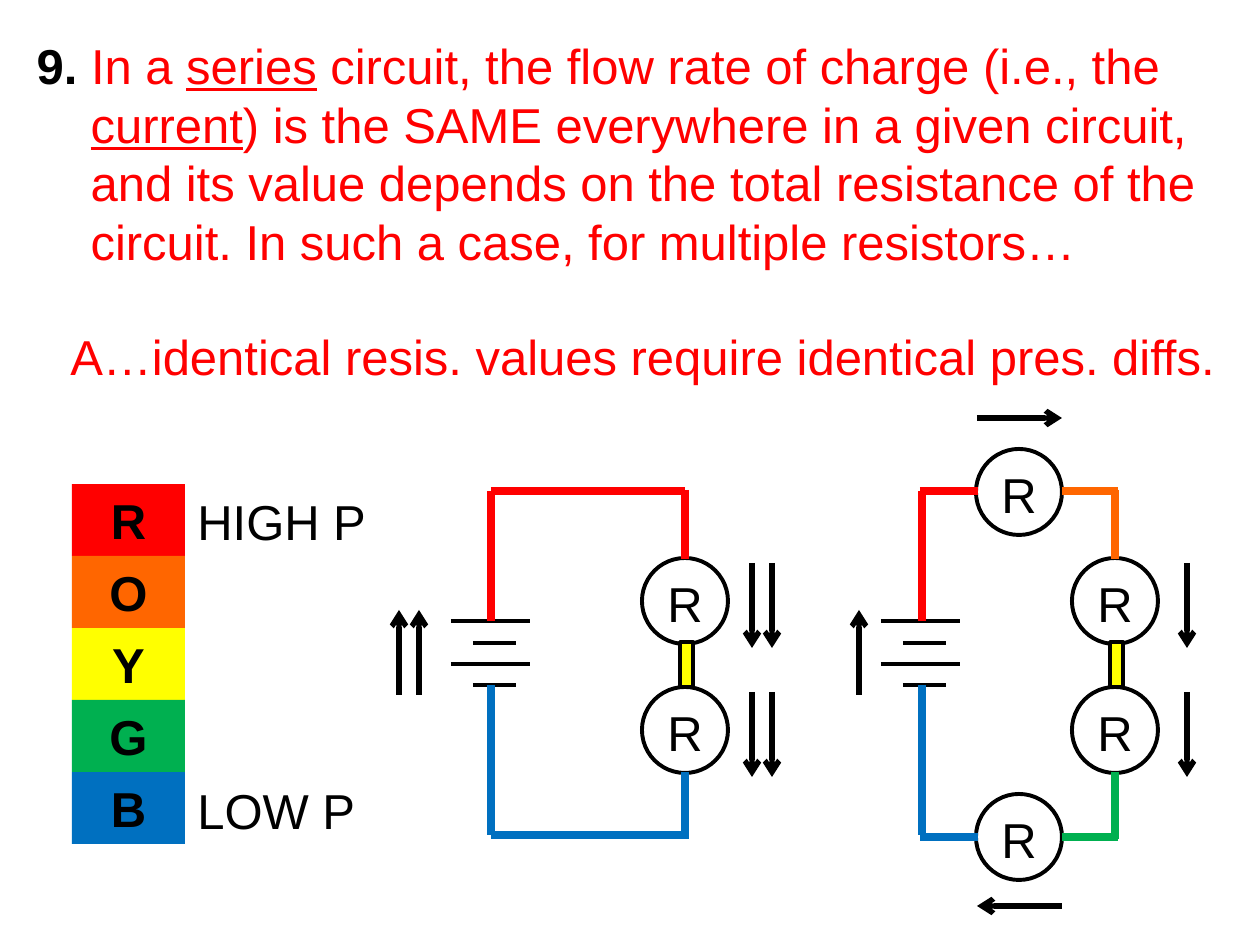
"""Build the slide on series circuits with identical resistors."""
from lxml.etree import SubElement
from pptx import Presentation
from pptx.dml.color import RGBColor
from pptx.enum.shapes import MSO_CONNECTOR, MSO_SHAPE
from pptx.enum.text import MSO_ANCHOR, MSO_AUTO_SIZE, PP_ALIGN
from pptx.oxml.ns import qn
from pptx.util import Emu, Pt

PX = 914400 / 126
COLORS = {"black": "000000", "red": "FF0000", "orange": "FF6600",
          "yellow": "FFFF00", "green": "00B050", "blue": "0070C0"}
RGB = {name: RGBColor.from_string(value) for name, value in COLORS.items()}

deck = Presentation()
deck.slide_width, deck.slide_height = Emu(9144000), Emu(6858000)
slide = deck.slides.add_slide(deck.slide_layouts[5])
shapes = slide.shapes


def add_line(ends, color, width, arrow=False):
    line = shapes.add_connector(MSO_CONNECTOR.STRAIGHT, *[Emu(round(n * PX)) for n in ends])
    line.line.color.rgb = RGB[color]
    line.line.width = Pt(width)
    properties = line._element.spPr
    if arrow:
        SubElement(properties.find(qn("a:ln")), qn("a:tailEnd"), type="arrow")
    SubElement(properties, qn("a:effectLst"))


def style_text(shape, text, color="black", bold=False):
    frame = shape.text_frame
    frame.text = text
    font = frame.paragraphs[0].font
    font.name, font.size, font.bold = "Arial", Pt(28), bold
    font.color.rgb = RGB[color]
    return frame


title = shapes.title
title.left, title.top, title.width, title.height = [
    Emu(round(n * PX)) for n in (24, 29, 1198, 251)]
frame = style_text(title, "", "red")
frame.auto_size, frame.word_wrap = MSO_AUTO_SIZE.NONE, True
frame.vertical_anchor = MSO_ANCHOR.TOP
para = frame.paragraphs[0]
para.alignment = PP_ALIGN.LEFT
indent = round(54 * PX)
para._p.get_or_add_pPr().set("marL", str(indent))
para._p.get_or_add_pPr().set("indent", str(-indent))
for text, style in [
    ("9.", "number"),
    (" In a ", None),
    ("series", "underline"),
    (" circuit, the flow rate of charge (i.e., the ", None),
    ("current", "underline"),
    (") is the SAME everywhere in a given circuit, and its value depends on the total "
     "resistance of the circuit. In such a case, for multiple resistors…", None),
]:
    span = para.add_run()
    span.text = text
    if style == "underline":
        span.font.underline = True
    if style == "number":
        span.font.bold = True
        span.font.color.rgb = RGB["black"]

for left, top, width, text, color in [
    (58, 320, 1198, "A…identical resis. values require identical pres. diffs.", "red"),
    (185, 485, 195, "HIGH P", "black"),
    (185, 774, 185, "LOW P", "black"),
]:
    box = shapes.add_textbox(*[Emu(round(n * PX)) for n in (left, top, width, 72)])
    style_text(box, text, color).word_wrap = False

for row, color in enumerate(["red", "orange", "yellow", "green", "blue"]):
    swatch = shapes.add_shape(
        MSO_SHAPE.RECTANGLE, *[Emu(round(n * PX)) for n in (72, 484 + 72 * row, 113, 72)])
    swatch.shadow.inherit = False
    swatch.fill.solid()
    swatch.fill.fore_color.rgb = RGB[color]
    swatch.line.fill.background()
    style_text(swatch, color[0].upper(), bold=True).paragraphs[0].alignment = PP_ALIGN.CENTER

SERIES_OFFSET = 430
resistors = [(642 + shift, top) for shift in (0, SERIES_OFFSET) for top in (558, 687)]
resistors += [(976, 449), (976, 794)]
for left, top in resistors:
    resistor = shapes.add_shape(
        MSO_SHAPE.OVAL, *[Emu(round(n * PX)) for n in (left, top, 86, 86)])
    resistor.shadow.inherit = False
    resistor.fill.background()
    resistor.line.color.rgb = RGB["black"]
    resistor.line.width = Pt(2.25)
    frame = style_text(resistor, "R")
    frame.margin_left = frame.margin_right = frame.margin_bottom = 0
    frame.margin_top = Emu(round(4 * PX))
    frame.vertical_anchor = MSO_ANCHOR.MIDDLE
    frame.paragraphs[0].alignment = PP_ALIGN.CENTER

for shift in (0, SERIES_OFFSET):
    for top in (621, 664):
        add_line((451 + shift, top, 530 + shift, top), "black", 2.25)
    for top in (643, 685):
        add_line((473 + shift, top, 516 + shift, top), "black", 2.25)
    link = shapes.add_shape(
        MSO_SHAPE.RECTANGLE, *[Emu(round(n * PX)) for n in (680 + shift, 642, 13, 45)])
    link.shadow.inherit = False
    link.fill.solid()
    link.fill.fore_color.rgb = RGB["yellow"]
    link.line.color.rgb = RGB["black"]
    link.line.width = Pt(2)

wires = {
    "red": [(491, 491, 685, 491), (491, 491, 491, 621), (685, 490, 685, 559),
            (920, 491, 978, 491), (922, 491, 922, 621)],
    "orange": [(1115, 490, 1115, 559), (1062, 491, 1118, 491)],
    "blue": [(491, 685, 491, 835), (491, 835, 685, 835), (685, 772, 685, 839),
             (922, 685, 922, 835), (920, 837, 978, 837)],
    "green": [(1115, 772, 1115, 839), (1062, 837, 1118, 837)],
}
for color, paths in wires.items():
    for ends in paths:
        add_line(ends, color, 4.5)

arrows = [(x, top, x, top + 85) for x in (752, 772, 1187) for top in (563, 692)]
arrows += [(x, 695, x, 610) for x in (399, 419, 859)]
arrows += [(977, 418, 1062, 418), (1062, 906, 977, 906)]
for ends in arrows:
    add_line(ends, "black", 3, arrow=True)

deck.save("out.pptx")
